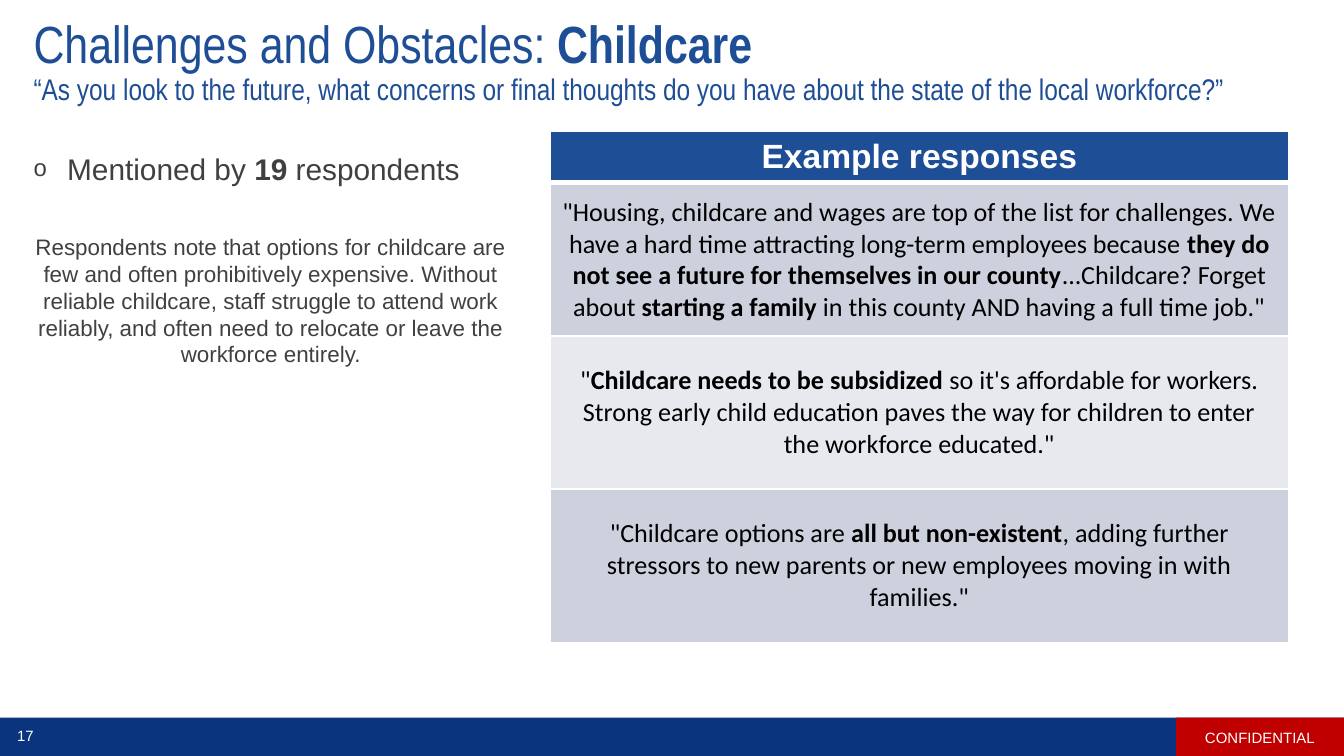
from lxml import etree
from pptx import Presentation
from pptx.dml.color import RGBColor
from pptx.enum.shapes import MSO_SHAPE
from pptx.enum.text import MSO_ANCHOR, MSO_AUTO_SIZE, PP_ALIGN
from pptx.oxml.ns import qn
from pptx.util import Inches, Pt

RECTANGLE = MSO_SHAPE.RECTANGLE
MIDDLE, TOP = MSO_ANCHOR.MIDDLE, MSO_ANCHOR.TOP
CENTER, LEFT = PP_ALIGN.CENTER, PP_ALIGN.LEFT
NO_FIT = MSO_AUTO_SIZE.NONE
COLORS = {
    "blue": "1E4E96", "navy": "0A357E", "red": "C00000", "white": "FFFFFF",
    "black": "000000", "gray": "404040", "band": "CDD0DD", "pale": "E8E9EF",
}
QUESTION = ("“As you look to the future, what concerns or final thoughts do you have "
            "about the state of the local workforce?”")
SUMMARY = ("Respondents note that options for childcare are few and often prohibitively "
           "expensive. Without reliable childcare, staff struggle to attend work reliably, "
           "and often need to relocate or leave the workforce entirely.")
RESPONSES = [
    [("\"Housing, childcare and wages are top of the list for challenges. We have a hard "
      "time attracting long-term employees because ", False),
     ("they do not see a future for themselves in our county", True),
     ("...Childcare? Forget about ", False),
     ("starting a family ", True),
     ("in this county AND having a full time job.\"", False)],
    [("\"", False),
     ("Childcare needs to be subsidized ", True),
     ("so it's affordable for workers. Strong early child education paves the way for "
      "children to enter the workforce educated.\"", False)],
    [("\"Childcare options are ", False),
     ("all but non-existent", True),
     (", adding further stressors to new parents or new employees moving in with "
      "families.\"", False)],
]


def color(name):
    """Return the named color."""
    return RGBColor.from_string(COLORS[name])


def write(para, spans, size, font, ink, align=LEFT):
    """Fill a paragraph with (text, bold) spans in one style."""
    para.alignment = align
    for text, bold in spans:
        span = para.add_run()
        span.text = text
        span.font.size, span.font.name, span.font.bold = Pt(size), font, bold
        span.font.color.rgb = color(ink)


def place(shape, left, top, width, height):
    """Move and size a shape, in inches."""
    shape.left, shape.top = Inches(left), Inches(top)
    shape.width, shape.height = Inches(width), Inches(height)


def set_up_frame(frame, anchor):
    """Wrap a text frame at fixed size with the given anchor."""
    frame.word_wrap, frame.auto_size, frame.vertical_anchor = True, NO_FIT, anchor


def add_bar(page, left, width, fill):
    """Add a footer rectangle and return it."""
    bar = page.shapes.add_shape(RECTANGLE, Inches(left), Inches(5.34),
                                Inches(width), Inches(0.29))
    bar.shadow.inherit = False
    bar.fill.solid()
    bar.fill.fore_color.rgb = color(fill)
    bar.line.fill.background()
    return bar


def add_footer(page):
    """Add the footer bars, the label and the page number."""
    add_bar(page, 0, 10, "navy")
    label = add_bar(page, 8.75, 1.25, "red").text_frame
    number = page.shapes.add_textbox(Inches(0), Inches(5.35),
                                     Inches(0.38), Inches(0.24)).text_frame
    for frame, text in ((label, "CONFIDENTIAL"), (number, "17")):
        set_up_frame(frame, MIDDLE)
        write(frame.paragraphs[0], [(text, False)], 8, "Arial", "white", CENTER)


def fill_title(title):
    """Write the heading and the survey question."""
    place(title, 0.15, 0.15, 9.67, 0.63)
    frame = title.text_frame
    set_up_frame(frame, MIDDLE)
    frame.margin_left = frame.margin_top = frame.margin_bottom = Inches(0.1)
    frame.margin_right = Inches(0.2)
    heading, question = frame.paragraphs[0], frame.add_paragraph()
    write(heading, [("Challenges and Obstacles: ", False), ("Childcare", True)],
          28, "Arial Narrow", "blue")
    write(question, [(QUESTION, False)], 16, "Arial Narrow", "blue")
    for para in (heading, question):
        para.line_spacing = 0.9


def set_bullet(para, char=None, indent=0):
    """Set the hanging indent and bullet of a paragraph, or clear them."""
    props = para._p.get_or_add_pPr()
    props.set("marL", str(Inches(indent)))
    props.set("indent", str(-Inches(indent)))
    if char:
        etree.SubElement(props, qn("a:buSzPct")).set("val", "80000")
        etree.SubElement(props, qn("a:buChar")).set("char", char)
    else:
        etree.SubElement(props, qn("a:buNone"))


def fill_body(body):
    """Write the mention count and the summary."""
    place(body, 0.15, 1.07, 3.73, 2.7)
    frame = body.text_frame
    set_up_frame(frame, TOP)
    count, summary = frame.paragraphs[0], frame.add_paragraph()
    write(count, [("Mentioned by ", False), ("19", True), (" respondents", False)],
          16, "Arial", "gray")
    count.space_before = Pt(3)
    set_bullet(count, "o", 0.25)
    write(summary, [(SUMMARY, False)], 12, "Arial", "gray", CENTER)
    summary.space_before = Pt(25)
    set_bullet(summary)


def style_cell(cell, fill, bottom_width):
    """Give a cell white borders and a solid fill."""
    props = cell._tc.get_or_add_tcPr()
    for side, width in (("L", 1), ("R", 1), ("T", 1), ("B", bottom_width)):
        line = etree.SubElement(props, qn(f"a:ln{side}"), w=str(Pt(width)))
        solid = etree.SubElement(line, qn("a:solidFill"))
        etree.SubElement(solid, qn("a:srgbClr"), val=COLORS["white"])
    cell.fill.solid()
    cell.fill.fore_color.rgb = color(fill)


def add_responses(page):
    """Add the table of example responses."""
    table = page.shapes.add_table(len(RESPONSES) + 1, 1, Inches(4.09), Inches(0.98),
                                  Inches(5.5), Inches(3.81)).table
    header = table.cell(0, 0)
    table.rows[0].height = Inches(0.3)
    style_cell(header, "blue", 3)
    write(header.text_frame.paragraphs[0], [("Example responses", True)],
          18, "Arial", "white", CENTER)
    for row, spans in enumerate(RESPONSES, 1):
        table.rows[row].height = Inches(1.14)
        cell = table.cell(row, 0)
        cell.vertical_anchor = MIDDLE
        style_cell(cell, "band" if row % 2 else "pale", 1)
        write(cell.text_frame.paragraphs[0], spans, 14, "Calibri", "black", CENTER)
    first = table.cell(1, 0)
    first.margin_left = first.margin_right = first.margin_top = Inches(0.01)
    first.margin_bottom = 0


def main():
    """Build the childcare slide."""
    deck = Presentation()
    deck.slide_width = Inches(10)
    deck.slide_height = deck.slide_width * 9 // 16
    page = deck.slides.add_slide(deck.slide_layouts[1])
    add_footer(page)
    fill_title(page.shapes.title)
    add_responses(page)
    fill_body(page.placeholders[1])
    deck.save("out.pptx")


if __name__ == "__main__":
    main()
